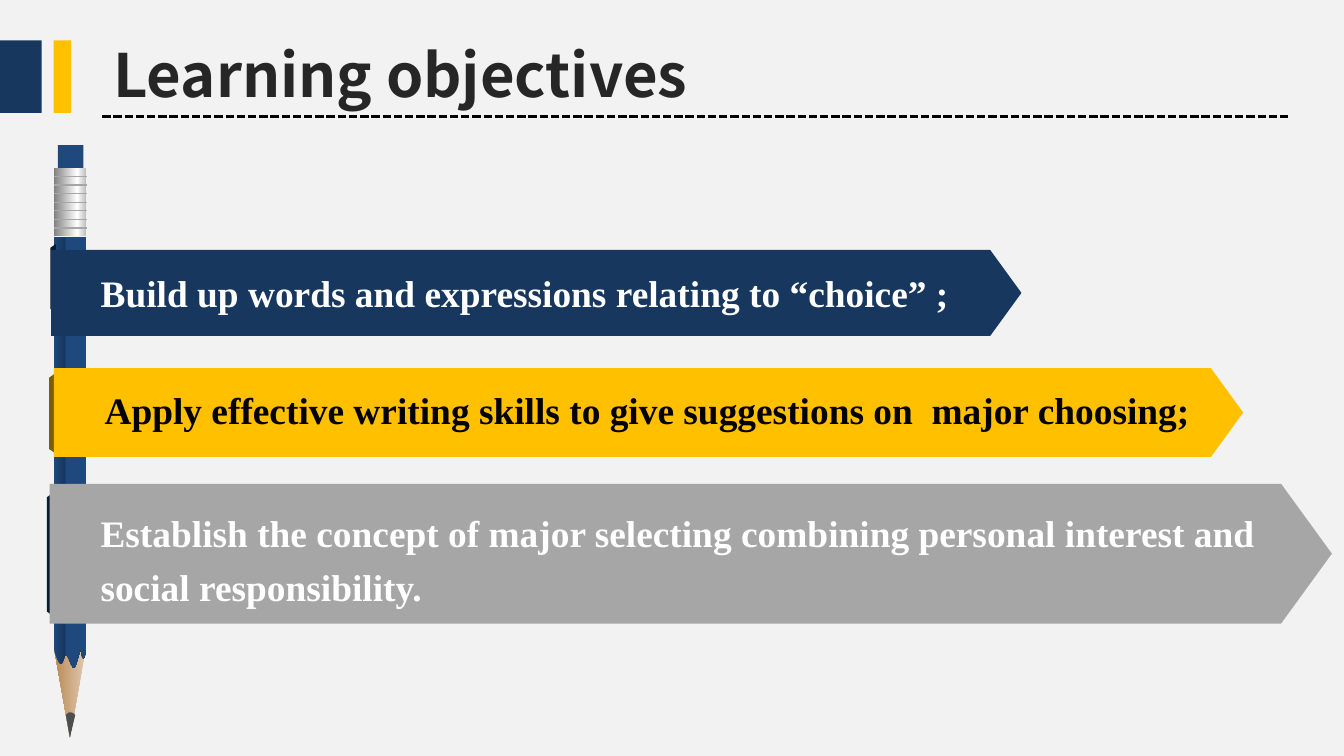
from lxml.etree import SubElement
from pptx import Presentation
from pptx.dml.color import RGBColor
from pptx.enum.dml import MSO_LINE
from pptx.enum.shapes import MSO_CONNECTOR, MSO_SHAPE as SHAPE
from pptx.enum.text import MSO_ANCHOR, MSO_AUTO_SIZE, PP_ALIGN
from pptx.oxml.ns import qn
from pptx.util import Inches, Pt

COLORS = {
    "page": "F2F2F2", "navy": "17375E", "blue": "1F497D", "gold": "FFC000",
    "gray": "A6A6A6", "navy_fold": "0C1B2F", "gold_fold": "7F5D02",
    "lead": "4C504C", "light_wood": "E1C9AF", "dark_wood": "B88954",
    "silver": "BFBFBF", "steel": "808080", "white": "FFFFFF",
    "black": "000000", "title": "262626",
}


def rgb(name):
    return RGBColor.from_string(COLORS[name])


def paint(shape, color):
    shape.shadow.inherit = False
    shape.line.fill.background()
    shape.fill.solid()
    shape.fill.fore_color.rgb = rgb(color)


def paint_gradient(shape, stops, angle):
    """Fill with (percent, color) stops; the angle runs counter-clockwise."""
    shape.shadow.inherit = False
    shape.line.fill.background()
    shape.fill.gradient()
    shape.fill.gradient_angle = angle
    stop_list = shape.element.spPr.find(".//" + qn("a:gsLst"))
    for stop in list(stop_list):
        stop_list.remove(stop)
    for percent, color in stops:
        stop = SubElement(stop_list, qn("a:gs"), pos=str(percent * 1000))
        SubElement(stop, qn("a:srgbClr"), val=COLORS[color])


def add_shape(page, kind, left, top, width, height, turn=0, adjust=None):
    shape = page.shapes.add_shape(
        kind, Inches(left), Inches(top), Inches(width), Inches(height))
    shape.rotation = turn
    if adjust is not None:
        shape.adjustments[0] = adjust
    return shape


def add_line(page, start, end, color, width, dash=None):
    line = page.shapes.add_connector(
        MSO_CONNECTOR.STRAIGHT, *(Inches(value) for value in (*start, *end)))
    line.line.color.rgb = rgb(color)
    line.line.width = Pt(width)
    if dash:
        line.line.dash_style = dash
    SubElement(line.element.spPr, qn("a:effectLst"))


def curve(start, first, second, end, steps=6):
    """Points along a cubic curve, without its start."""
    points = []
    for step in range(1, steps + 1):
        t = step / steps
        weights = ((1 - t) ** 3, 3 * t * (1 - t) ** 2, 3 * t * t * (1 - t), t ** 3)
        points.append(tuple(
            sum(w * p[axis] for w, p in zip(weights, (start, first, second, end)))
            for axis in (0, 1)))
    return points


def add_outline(page, left, top, points):
    spots = [(Inches(left + x), Inches(top + y)) for x, y in points]
    builder = page.shapes.build_freeform(*spots[0])
    builder.add_line_segments(spots[1:], close=True)
    return builder.convert_to_shape()


def format_text(para, text, **values):
    span = para.add_run()
    span.text = text
    color = values.pop("color")
    for name, value in values.items():
        setattr(span.font, name, value)
    span.font.color.rgb = rgb(color)


def build_header(page, left, top, height):
    # Colour blocks and dashed rule
    for offset, width, color in ((-0.01, 0.32, "navy"), (0.4, 0.13, "gold")):
        paint(add_shape(page, SHAPE.RECTANGLE, left + offset, top, width, height), color)
    rule = top + height + 0.03
    add_line(page, (left + 0.76, rule), (left + 9.58, rule), "black", 1.5,
             MSO_LINE.SQUARE_DOT)

    # Title
    title = page.shapes.title
    box = {"left": left - 0.02, "top": top - 0.07, "width": 6, "height": 1.01}
    for name, value in box.items():
        setattr(title, name, Inches(value))
    frame = title.text_frame
    frame.word_wrap = True
    frame.auto_size = MSO_AUTO_SIZE.NONE
    frame.vertical_anchor = MSO_ANCHOR.TOP
    frame.paragraphs[0].alignment = PP_ALIGN.CENTER
    format_text(frame.paragraphs[0], "Learning objectives", size=Pt(32),
                name="Noto Sans CJK SC", bold=True, color="title")


def build_pencil(page, left, top, width):
    # Wooden tip, turned to point down
    tip_length = 0.69
    tip = add_shape(page, SHAPE.PENTAGON, left + (width - tip_length) / 2,
                    top + 4.06 - width / 2, tip_length, width, 90, 2.816)
    paint_gradient(tip, [(0, "light_wood"), (100, "dark_wood")], 270)

    # Body with a wavy sharpened edge
    wave = [
        ((0.24, 3.11), (0.23, 3.13), (0.22, 3.14)),
        ((0.2, 3.12), (0.21, 3.07), (0.2, 3.08)),
        ((0.19, 3.09), (0.17, 3.2), (0.15, 3.21)),
        ((0.13, 3.21), (0.11, 3.11), (0.09, 3.11)),
        ((0.08, 3.11), (0.07, 3.19), (0.05, 3.18)),
        ((0.03, 3.16), (0.01, 3.11), (0, 3.06)),
    ]
    points = [(0, 0), (width, 0), (width, 3.04)]
    for bend in wave:
        points += curve(points[-1], *bend)
    body = add_outline(page, left, top + 0.68, points)
    paint_gradient(body, [(0, "blue"), (34, "navy"), (38, "blue"), (100, "blue")], 0)

    # Metal ferrule, eraser and lead
    ferrule_top, ferrule_height = top + 0.17, 0.51
    ferrule = add_shape(page, SHAPE.RECTANGLE, left, ferrule_top, width, ferrule_height)
    paint_gradient(ferrule, [(0, "silver"), (27, "white"), (100, "steel")], 180)
    paint(add_shape(page, SHAPE.RECTANGLE, left + 0.03, top, 0.19, 0.17), "blue")
    cap = [(0.09, 4.24)]
    cap += curve(cap[0], (0.1, 4.23), (0.11, 4.22), (0.12, 4.22))
    cap += curve(cap[-1], (0.14, 4.22), (0.15, 4.23), (0.16, 4.24))
    paint(add_outline(page, left, top, cap + [(0.12, 4.41)]), "lead")

    # Ferrule rings
    rings = 7
    for ring in range(1, rings + 1):
        y = ferrule_top + ferrule_height * ring / (rings + 1)
        add_line(page, (left, y), (left + width + 0.01, y), "gray", 0.75)


def build_banner(page, box, fold_box, text_box, lines, colors, spacing):
    left, top, width, height = box
    fill, fold_color, text_color = colors

    # Fold behind the pencil
    fold = add_shape(page, SHAPE.TRAPEZOID, left + fold_box[0], top + fold_box[1],
                     *fold_box[2:], 270, 0.698)
    paint(fold, fold_color)

    # Pointed strip and its text
    paint(add_shape(page, SHAPE.PENTAGON, left, top, width, height, 0, 0.363), fill)
    x, y, text_width, text_height = text_box
    label = page.shapes.add_textbox(Inches(left + x), Inches(top + y),
                                    Inches(text_width), Inches(text_height))
    frame = label.text_frame
    frame.word_wrap = True
    for index, line in enumerate(lines):
        para = frame.add_paragraph() if index else frame.paragraphs[0]
        para.line_spacing = spacing
        format_text(para, line, size=Pt(20), name="Times New Roman", bold=True,
                    color=text_color)


BANNERS = [
    ((0.38, 1.86, 7.22, 0.64), (-0.24, 0.19, 0.51, 0.04), (0.27, 0.1, 6.55, 0.4),
     ["Build up words and expressions relating to “choice” ;"],
     ("navy", "navy_fold", "white"), 1.0),
    ((0.4, 2.74, 8.85, 0.66), (-0.31, 0.31, 0.6, 0.05), (0.28, 0.09, 8.33, 0.42),
     ["Apply effective writing skills to give suggestions on  major choosing;"],
     ("gold", "gold_fold", "black"), 1.0),
    ((0.37, 3.6, 9.54, 1.04), (-0.46, 0.49, 0.95, 0.07), (0.28, 0.08, 9.66, 0.88),
     ["Establish the concept of major selecting combining personal interest and",
      "social responsibility."],
     ("gray", "navy_fold", "white"), 1.2),
]


def main():
    deck = Presentation()
    deck.slide_width = Inches(10)
    deck.slide_height = deck.slide_width * 9 // 16
    page = deck.slides.add_slide(deck.slide_layouts[5])
    page.background.fill.solid()
    page.background.fill.fore_color.rgb = rgb("page")
    build_pencil(page, 0.4, 1.08, 0.24)
    for banner in BANNERS:
        build_banner(page, *banner)
    build_header(page, 0, 0.3, 0.54)
    deck.save("out.pptx")


if __name__ == "__main__":
    main()
